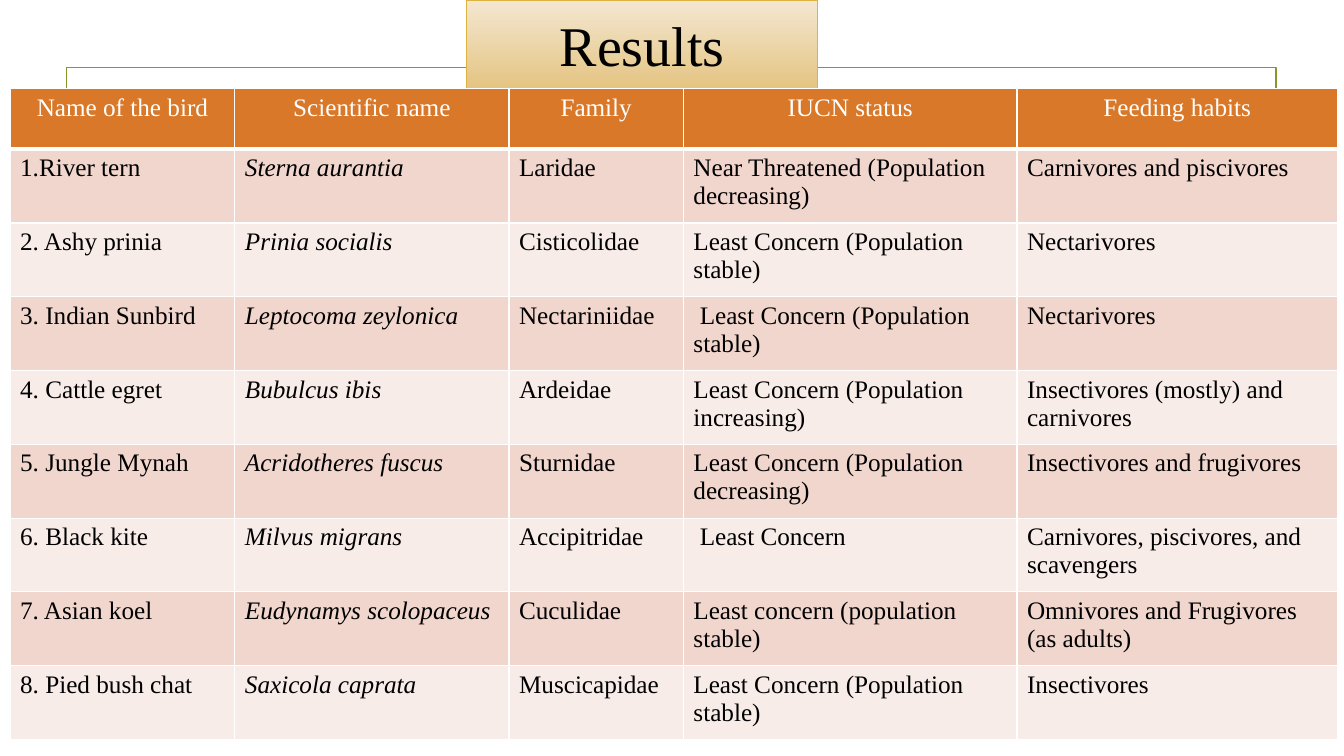
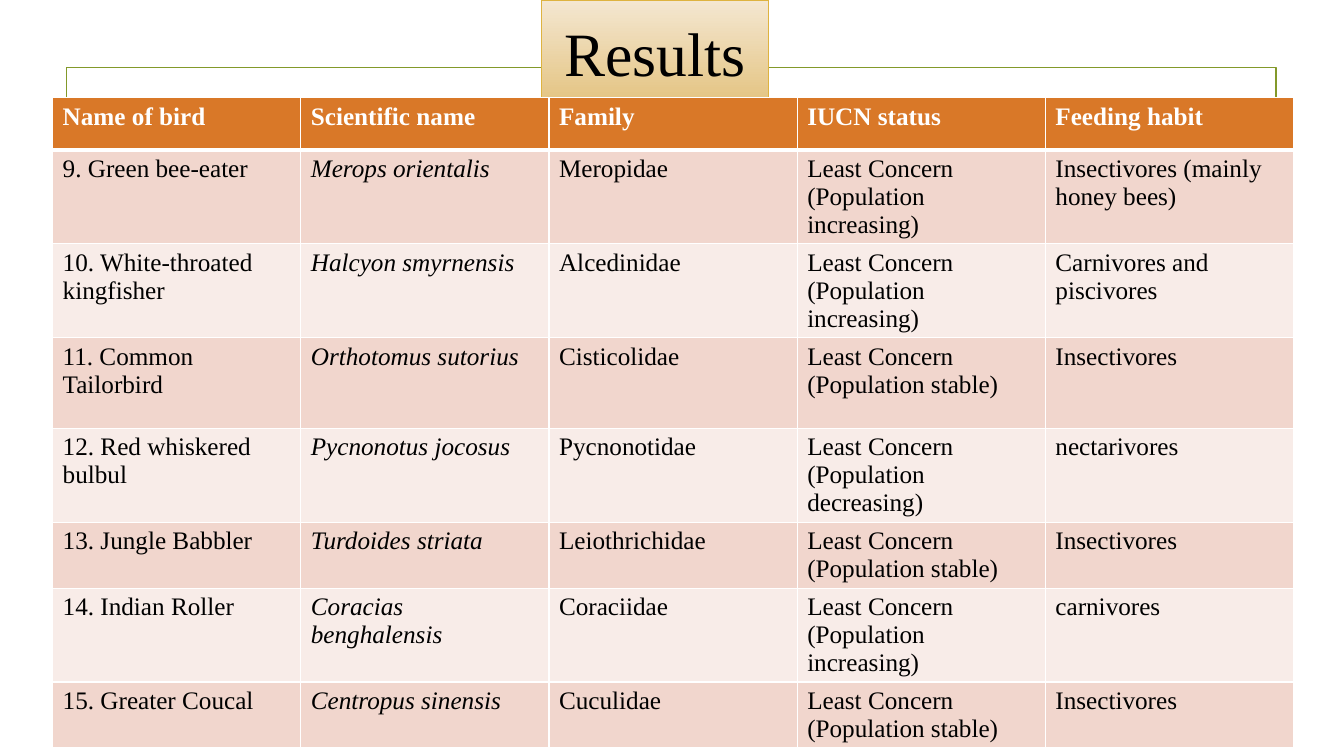
"""Build two slides of bird survey results, each a titled table in a thin frame."""
import pptx
import pptx.dml.color
import pptx.enum.shapes
import pptx.enum.text
import pptx.oxml
import pptx.oxml.ns
import pptx.util

Pt = pptx.util.Pt
ALIGN = pptx.enum.text.PP_ALIGN
RECTANGLE = pptx.enum.shapes.MSO_SHAPE.RECTANGLE

FONT = "Times New Roman"
COLOURS = {
    "frame": "83992A",
    "title_top": "F4E7D1",
    "title_bottom": "E4C482",
    "title_line": "DEB340",
    "header": "D97828",
    "odd": "F1D6CD",
    "even": "F8ECE8",
    "white": "FFFFFF",
    "black": "000000",
}
FRAME = (47.5, 48.2, 864, 444.2)
SCIENTIFIC_COLUMN = 1

SLIDES = [
    {
        "title": "Results",
        "title_box": (333.4, 0, 250.6, 63.4),
        "title_size": 40,
        "table_at": (7.2, 63.4),
        "columns": [160.6, 195.8, 124.6, 238.3, 229],
        "rows": [43.2] + [52.7] * 8,
        "header_format": {"align": ALIGN.CENTER},
        "header": ["Name of the bird", "Scientific name", "Family", "IUCN status", "Feeding habits"],
        "birds": [
            ("1.River tern", "Sterna aurantia", "Laridae",
             "Near Threatened (Population decreasing)", "Carnivores and piscivores"),
            ("2. Ashy prinia", "Prinia socialis", "Cisticolidae",
             "Least Concern (Population stable)", "Nectarivores"),
            ("3. Indian Sunbird", "Leptocoma zeylonica", "Nectariniidae",
             " Least Concern (Population stable)", "Nectarivores"),
            ("4. Cattle egret", "Bubulcus ibis", "Ardeidae",
             "Least Concern (Population increasing)", "Insectivores (mostly) and carnivores"),
            ("5. Jungle Mynah", "Acridotheres fuscus", "Sturnidae",
             "Least Concern (Population decreasing)", "Insectivores and frugivores"),
            ("6. Black kite", "Milvus migrans", "Accipitridae",
             " Least Concern", "Carnivores, piscivores, and scavengers"),
            ("7. Asian koel", "Eudynamys scolopaceus", "Cuculidae",
             "Least concern (population stable)", "Omnivores and Frugivores (as adults)"),
            ("8. Pied bush chat", "Saxicola caprata", "Muscicapidae",
             "Least Concern (Population stable)", "Insectivores"),
        ],
    },
    {
        "title": "Results",
        "title_box": (386.6, 0, 162.7, 73.4),
        "title_size": 44,
        "table_at": (37.6, 69.8),
        "columns": [177.3] * 5,
        "rows": [37.4] * 2 + [64.8] * 3 + [37.4] * 3,
        "header_format": {"bold": True},
        "header": ["Name of bird", "Scientific name", "Family", "IUCN status", "Feeding habit"],
        "birds": [
            ("9. Green bee-eater", "Merops orientalis", "Meropidae",
             "Least Concern (Population increasing)", "Insectivores (mainly honey bees)"),
            ("10. White-throated kingfisher", "Halcyon smyrnensis", "Alcedinidae",
             "Least Concern (Population increasing)", "Carnivores and piscivores"),
            ("11. Common Tailorbird", "Orthotomus sutorius", "Cisticolidae",
             "Least Concern (Population stable)", "Insectivores"),
            ("12. Red whiskered bulbul", "Pycnonotus jocosus", "Pycnonotidae",
             "Least Concern (Population decreasing)", "nectarivores"),
            ("13. Jungle Babbler", "Turdoides striata", "Leiothrichidae",
             "Least Concern (Population stable)", "Insectivores"),
            ("14. Indian Roller", "Coracias benghalensis", "Coraciidae",
             "Least Concern (Population increasing)", "carnivores"),
            ("15. Greater Coucal", "Centropus sinensis", "Cuculidae",
             "Least Concern (Population stable)", "Insectivores"),
        ],
    },
]


def rgb(name):
    return pptx.dml.color.RGBColor.from_string(COLOURS[name])


def write(tf, text, size=18, colour="black", bold=False, italic=False, align=ALIGN.LEFT):
    p = tf.paragraphs[0]
    p.alignment = align
    r = p.add_run()
    r.text = text
    r.font.name = FONT
    r.font.size = Pt(size)
    r.font.bold = bold
    r.font.italic = italic
    r.font.color.rgb = rgb(colour)


def add_box(s, box, line, width):
    sp = s.shapes.add_shape(RECTANGLE, *map(Pt, box))
    sp.shadow.inherit = False
    sp.fill.background()
    sp.line.color.rgb = rgb(line)
    sp.line.width = Pt(width)
    return sp


def add_title(s, text, box, size):
    sp = add_box(s, box, "title_line", 0.75)
    sp.fill.gradient()
    sp.fill.gradient_angle = 270
    for stop, name in zip(sp.fill.gradient_stops, ("title_top", "title_bottom")):
        stop.color.rgb = rgb(name)
    tf = sp.text_frame
    tf.word_wrap = True
    tf.vertical_anchor = pptx.enum.text.MSO_ANCHOR.MIDDLE
    write(tf, text, size=size, align=ALIGN.CENTER)


def set_borders(cell, top, bottom):
    tcPr = cell._tc.get_or_add_tcPr()
    for side, width in (("L", 1), ("R", 1), ("T", top), ("B", bottom)):
        tcPr.append(pptx.oxml.parse_xml(
            f'<a:ln{side} {pptx.oxml.ns.nsdecls("a")} w="{Pt(width)}"><a:solidFill>'
            f'<a:srgbClr val="{COLOURS["white"]}"/></a:solidFill></a:ln{side}>'))


def add_bird_table(s, data):
    lines = [data["header"]] + data["birds"]
    widths, heights = data["columns"], data["rows"]
    box = (*data["table_at"], sum(widths), sum(heights))
    table = s.shapes.add_table(len(lines), len(widths), *map(Pt, box)).table
    table.horz_banding = False
    for column, width in zip(table.columns, widths):
        column.width = Pt(width)
    for i, line in enumerate(lines):
        table.rows[i].height = Pt(heights[i])
        fill = "header" if i == 0 else "odd" if i % 2 else "even"
        for j, text in enumerate(line):
            cell = table.cell(i, j)
            set_borders(cell, top=3 if i == 1 else 1, bottom=3 if i == 0 else 1)
            cell.fill.solid()
            cell.fill.fore_color.rgb = rgb(fill)
            if i == 0:
                write(cell.text_frame, text, colour="white", **data["header_format"])
            else:
                write(cell.text_frame, text, italic=j == SCIENTIFIC_COLUMN)


def main():
    prs = pptx.Presentation()
    prs.slide_width, prs.slide_height = Pt(960), Pt(540)
    for data in SLIDES:
        s = prs.slides.add_slide(prs.slide_layouts[6])
        add_box(s, FRAME, "frame", 1.25)
        add_title(s, data["title"], data["title_box"], data["title_size"])
        add_bird_table(s, data)
    prs.save("out.pptx")


if __name__ == "__main__":
    main()
